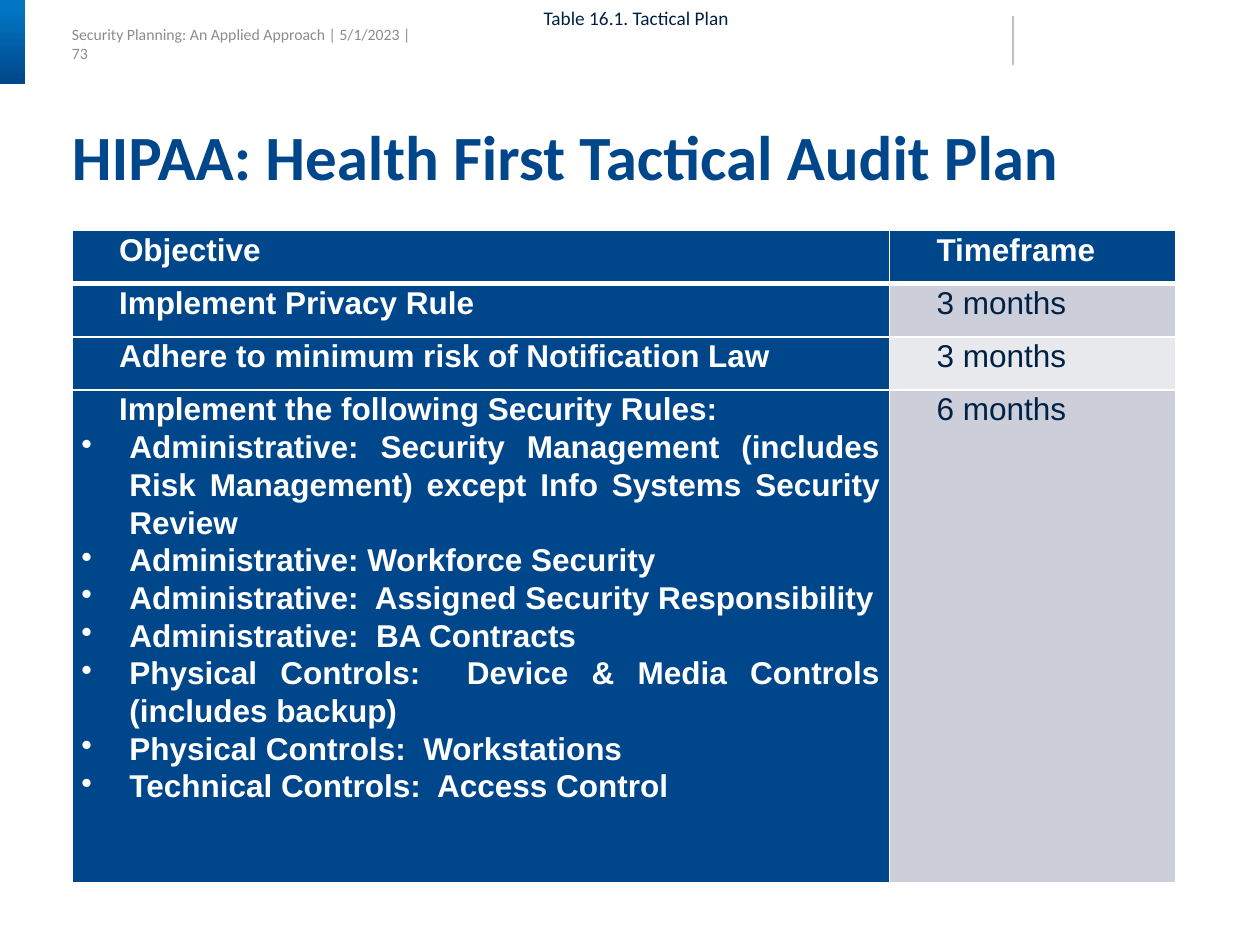
import pptx
import pptx.util
import pptx.dml.color
import pptx.enum.shapes
import pptx.enum.text
import pptx.oxml
import pptx.oxml.ns
import lxml.etree

Cm = pptx.util.Cm
Pt = pptx.util.Pt
ALIGN = pptx.enum.text.PP_ALIGN
ANCHOR = pptx.enum.text.MSO_ANCHOR
NAVY, INK, WHITE = "00468A", "002143", "FFFFFF"


def rgb(value):
    return pptx.dml.color.RGBColor.from_string(value)


def write(p, text, font, size, color, bold=False, align=ALIGN.LEFT, left=0, indent=0):
    p.text = text
    p.alignment = align
    pPr = p._p.get_or_add_pPr()
    pPr.set("marL", str(Cm(left)))
    pPr.set("indent", str(Cm(indent)))
    p.font.name, p.font.size, p.font.bold = font, Pt(size), bold
    p.font.color.rgb = rgb(color)


prs = pptx.Presentation()
prs.slide_width, prs.slide_height = Cm(25.4), Cm(19.05)
s = prs.slides.add_slide(prs.slide_layouts[6])

# Corner accent with a vertical gradient
sp = s.shapes.add_shape(pptx.enum.shapes.MSO_SHAPE.RECTANGLE, 0, 0, Cm(0.51), Cm(1.7))
sp.shadow.inherit = False
sp.line.fill.background()
sp.fill.gradient()
sp.fill.gradient_angle = 270
for stop, (position, color) in zip(sp.fill.gradient_stops, [(0.1, "0176C3"), (1, NAVY)]):
    stop.position = position
    stop.color.rgb = rgb(color)

# Header divider
line = s.shapes.add_connector(
    pptx.enum.shapes.MSO_CONNECTOR.STRAIGHT, Cm(20.42), Cm(0.33), Cm(20.42), Cm(1.32))
line.line.color.rgb = rgb("BFBFBF")
line.line.width = Pt(0.75)
lxml.etree.SubElement(line._element.spPr, pptx.oxml.ns.qn("a:effectLst"))

# Running header, title and table caption: box, wrap, anchor, line spacing, text style
texts = [
    ((1.45, 0.6, 7.21, 0.58), False, ANCHOR.MIDDLE, 1,
     dict(text="Security Planning: An Applied Approach | 5/1/2023 | 73",
          font="Calibri", size=9, color="8C8C8C")),
    ((1.45, 2.54, 22.66, 1.4), True, ANCHOR.TOP, 0.9,
     dict(text="HIPAA: Health First Tactical Audit Plan",
          font="Calibri", size=36, color=NAVY, bold=True)),
    ((-4.65, 0.13, 34.19, 0.48), True, ANCHOR.MIDDLE, 1,
     dict(text="Table 16.1. Tactical Plan", font="Calibri", size=11, color=INK,
          align=ALIGN.CENTER, indent=0.76)),
]
for box, wrap, anchor, spacing, style in texts:
    tf = s.shapes.add_textbox(*[Cm(v) for v in box]).text_frame
    tf.margin_left = tf.margin_right = tf.margin_top = tf.margin_bottom = 0
    tf.word_wrap = wrap
    tf.vertical_anchor = anchor
    write(tf.paragraphs[0], **style)
    tf.paragraphs[0].line_spacing = spacing

# Audit plan table: the first line of a cell is indented, later lines are bullets
rows = [
    (["Objective"], "Timeframe"),
    (["Implement Privacy Rule"], "3 months"),
    (["Adhere to minimum risk of Notification Law"], "3 months"),
    (["Implement the following Security Rules:",
      "Administrative: Security Management (includes Risk Management) "
      "except Info Systems Security Review",
      "Administrative: Workforce Security",
      "Administrative:  Assigned Security Responsibility",
      "Administrative:  BA Contracts",
      "Physical Controls:  Device & Media Controls (includes backup)",
      "Physical Controls:  Workstations",
      "Technical Controls:  Access Control"], "6 months"),
]
heights = [1.07, 1.07, 1.07, 9.93]
widths = [16.48, 5.77]
table = s.shapes.add_table(
    len(rows), 2, Cm(1.45), Cm(4.65), Cm(sum(widths)), Cm(sum(heights))).table
for column, width in zip(table.columns, widths):
    column.width = Cm(width)

for i, (objective, timeframe) in enumerate(rows):
    table.rows[i].height = Cm(heights[i])
    for j, lines in enumerate([objective, [timeframe]]):
        cell = table.cell(i, j)
        strong = i == 0 or j == 0
        cell.margin_left = cell.margin_right = Cm(0.19)
        cell.margin_top = cell.margin_bottom = 0
        cell.fill.solid()
        cell.fill.fore_color.rgb = rgb(NAVY if strong else "CCCFDA" if i % 2 else "E7E9ED")

        # White borders, heavier below the header row
        weights = {"L": 1, "R": 1, "T": 3 if i == 1 else 1, "B": 3 if i == 0 else 1}
        for k, (side, weight) in enumerate(weights.items()):
            cell._tc.get_or_add_tcPr().insert(k, pptx.oxml.parse_xml(
                f'<a:ln{side} {pptx.oxml.ns.nsdecls("a")} w="{Pt(weight)}">'
                f'<a:solidFill><a:srgbClr val="{WHITE}"/></a:solidFill></a:ln{side}>'))

        tf = cell.text_frame
        for n, text in enumerate(lines):
            p = tf.add_paragraph() if n else tf.paragraphs[0]
            left, indent = (0.97, -0.97) if n else (0, 0.76)
            write(p, text, "Arial", 18, WHITE if strong else INK, strong,
                  ALIGN.JUSTIFY, left, indent)
            p.line_spacing = 1.07
            if n:
                bullet = pptx.oxml.parse_xml(
                    f'<a:buChar {pptx.oxml.ns.nsdecls("a")} char="•"/>')
                p._p.pPr.insert(1, bullet)

prs.save("out.pptx")
